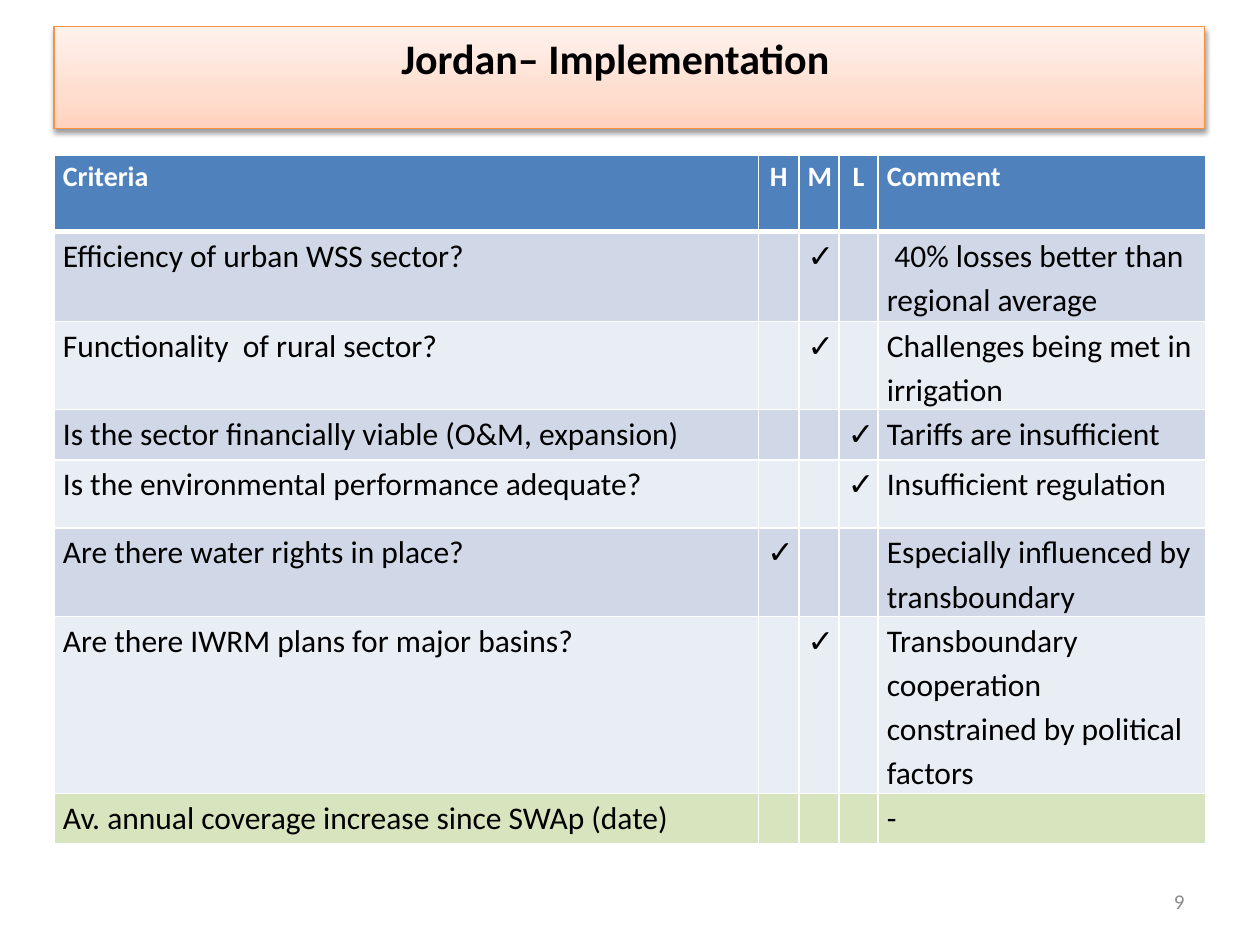
from copy import deepcopy

from lxml.etree import SubElement
from pptx import Presentation
from pptx.dml.color import RGBColor
from pptx.enum.shapes import MSO_SHAPE
from pptx.enum.text import MSO_ANCHOR, PP_ALIGN
from pptx.oxml.ns import qn
from pptx.util import Inches, Pt

BLACK = RGBColor(0x00, 0x00, 0x00)
WHITE = RGBColor(0xFF, 0xFF, 0xFF)
GRAY = RGBColor(0x8C, 0x8C, 0x8C)
ORANGE = RGBColor(0xF6, 0x92, 0x40)
HEADER_BLUE = RGBColor(0x4F, 0x81, 0xBD)
BAND_DARK = RGBColor(0xD0, 0xD8, 0xE8)
BAND_LIGHT = RGBColor(0xE9, 0xED, 0xF4)
SUMMARY_GREEN = RGBColor(0xD7, 0xE4, 0xBD)
TITLE_STOPS = [
    (0, RGBColor(0xFF, 0xD2, 0xBD)),
    (0.35, RGBColor(0xFF, 0xDE, 0xD0)),
    (1, RGBColor(0xFF, 0xF2, 0xED)),
]

HEADERS = ["Criteria", "H", "M", "L", "Comment"]
RATINGS = HEADERS[1:4]
CRITERIA = [
    ("Efficiency of urban WSS sector?", "M", "40% losses better than regional average"),
    ("Functionality  of rural sector?", "M", "Challenges being met in irrigation"),
    ("Is the sector financially viable (O&M, expansion)", "L", "Tariffs are insufficient"),
    ("Is the environmental performance adequate?", "L", "Insufficient regulation"),
    ("Are there water rights in place?", "H", "Especially influenced by transboundary"),
    ("Are there IWRM plans for major basins?", "M",
     "Transboundary cooperation constrained by political factors"),
    ("Av. annual coverage increase since SWAp (date)", None, "-"),
]
COLUMN_WIDTHS = [5.59, 0.32, 0.32, 0.31, 2.6]
ROW_HEIGHTS = [0.61, 0.71, 0.7, 0.4, 0.54, 0.7, 1.4, 0.4]


def write_text(text_frame, text, size=18, color=BLACK, bold=False,
               align=PP_ALIGN.LEFT, spacing=None, margin=0, indent=0):
    """Write one formatted paragraph into a text frame."""
    text_frame.word_wrap = True
    paragraph = text_frame.paragraphs[0]
    paragraph.text = text
    paragraph.alignment = align
    paragraph.line_spacing = spacing
    properties = paragraph._p.get_or_add_pPr()
    properties.set("marL", str(Inches(margin)))
    properties.set("indent", str(Inches(indent)))
    font = paragraph.font if not text else paragraph.runs[0].font
    font.name, font.size, font.bold = "Calibri", Pt(size), bold
    font.color.rgb = color


def add_title(slide, left, top, width, height):
    """Add the gradient title banner with its soft shadow."""
    banner = slide.shapes.add_shape(MSO_SHAPE.RECTANGLE, left, top, width, height)
    banner.fill.gradient()
    banner.fill.gradient_angle = 90
    stop_list = banner._element.spPr.find(".//" + qn("a:gsLst"))
    stop_list.append(deepcopy(stop_list[0]))
    for stop, (position, color) in zip(banner.fill.gradient_stops, TITLE_STOPS):
        stop.position = position
        stop.color.rgb = color
    banner.line.color.rgb = ORANGE
    banner.line.width = Pt(0.75)
    banner.shadow.inherit = False
    effects = banner._element.spPr.find(qn("a:effectLst"))
    shadow = SubElement(effects, qn("a:outerShdw"), blurRad=str(Pt(3.1)),
                        dist=str(Pt(1.6)), dir="5400000", rotWithShape="0")
    shadow_color = SubElement(shadow, qn("a:srgbClr"), val=str(BLACK))
    SubElement(shadow_color, qn("a:alpha"), val="38000")
    text_frame = banner.text_frame
    text_frame.vertical_anchor = MSO_ANCHOR.TOP
    text_frame.margin_right = Inches(0.32)
    write_text(text_frame, "Jordan– Implementation", size=24, bold=True,
               align=PP_ALIGN.CENTER)


def style_cell(cell, fill, top=1, bottom=1):
    """Set the margins, white borders and fill of a cell."""
    cell.margin_left = cell.margin_right = Inches(0.07)
    cell.margin_top = cell.margin_bottom = 0
    properties = cell._tc.get_or_add_tcPr()
    for side, width in (("L", 1), ("R", 1), ("T", top), ("B", bottom)):
        border = SubElement(properties, qn(f"a:ln{side}"), w=str(Pt(width)))
        border_fill = SubElement(border, qn("a:solidFill"))
        SubElement(border_fill, qn("a:srgbClr"), val=str(WHITE))
    cell.fill.solid()
    cell.fill.fore_color.rgb = fill


def add_criteria_table(slide, left, top, width, height):
    """Add the table of criteria, ratings and comments."""
    table = slide.shapes.add_table(len(ROW_HEIGHTS), len(HEADERS),
                                   left, top, width, height).table
    for column, column_width in zip(table.columns, COLUMN_WIDTHS):
        column.width = Inches(column_width)
    for row, row_height in zip(table.rows, ROW_HEIGHTS):
        row.height = Inches(row_height)

    for index, header in enumerate(HEADERS):
        cell = table.cell(0, index)
        style_cell(cell, HEADER_BLUE, bottom=3)
        write_text(cell.text_frame, header, size=16, color=WHITE, bold=True, spacing=1.15,
                   align=PP_ALIGN.CENTER if header in ("M", "L") else PP_ALIGN.LEFT,
                   margin=0.02 if header == "H" else 0)

    for row_index, (criterion, rating, comment) in enumerate(CRITERIA, start=1):
        fill = BAND_DARK if row_index % 2 else BAND_LIGHT
        if rating is None:
            fill = SUMMARY_GREEN
        marks = ["✓" if name == rating else "" for name in RATINGS]
        for index, text in enumerate([criterion, *marks, comment]):
            cell = table.cell(row_index, index)
            style_cell(cell, fill, top=3 if row_index == 1 else 1)
            write_text(cell.text_frame, text, spacing=1.15,
                       indent=0.06 if text.startswith("40%") else 0)


def add_page_number(slide, left, top, width, height):
    """Add the page number, right aligned in its box."""
    text_frame = slide.shapes.add_textbox(left, top, width, height).text_frame
    text_frame.vertical_anchor = MSO_ANCHOR.MIDDLE
    write_text(text_frame, "9", size=12, color=GRAY, align=PP_ALIGN.RIGHT)


def main():
    """Build and save the slide."""
    presentation = Presentation()
    presentation.slide_width = Inches(10)
    presentation.slide_height = Inches(7.5)
    slide = presentation.slides.add_slide(presentation.slide_layouts[6])
    left, width = Inches(0.43), Inches(9.13)
    add_criteria_table(slide, left, Inches(1.23), width, Inches(sum(ROW_HEIGHTS)))
    add_title(slide, left, Inches(0.21), width, Inches(0.81))
    add_page_number(slide, Inches(7.17), Inches(6.95), Inches(2.33), Inches(0.4))
    presentation.save("out.pptx")


if __name__ == "__main__":
    main()
